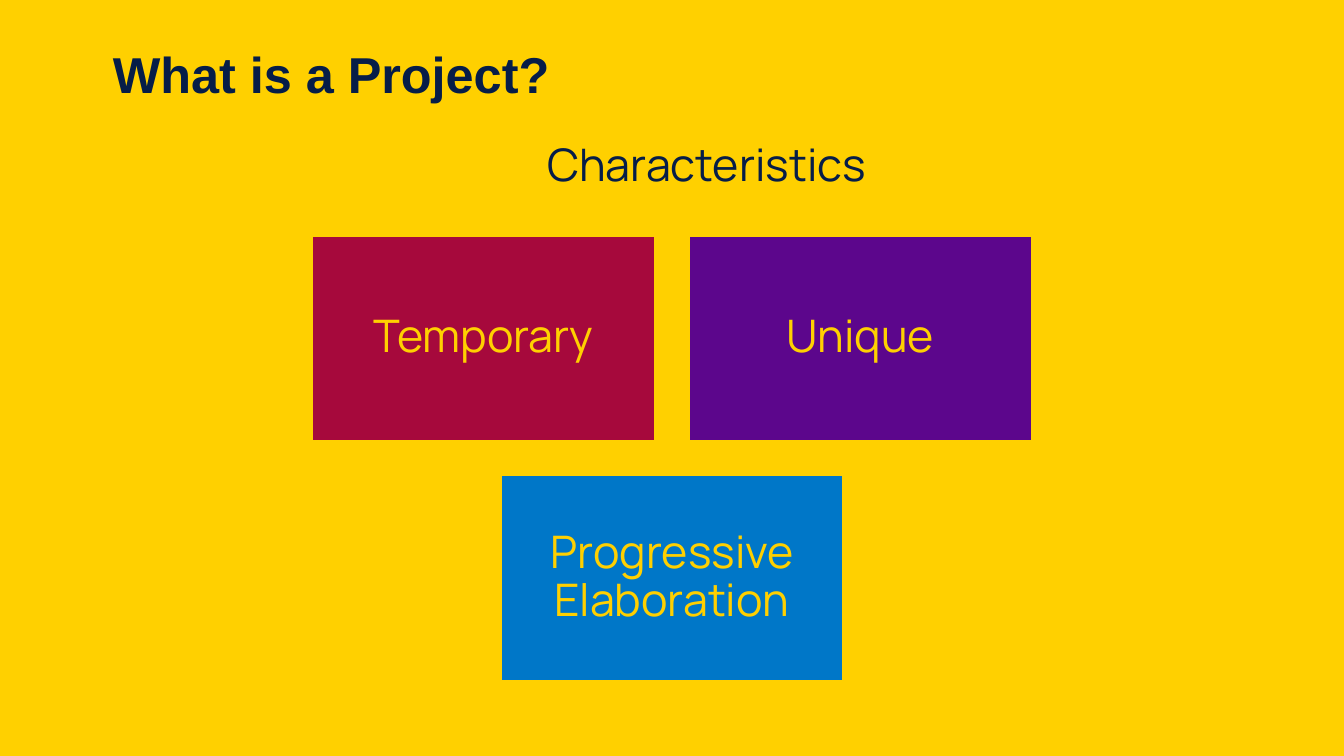
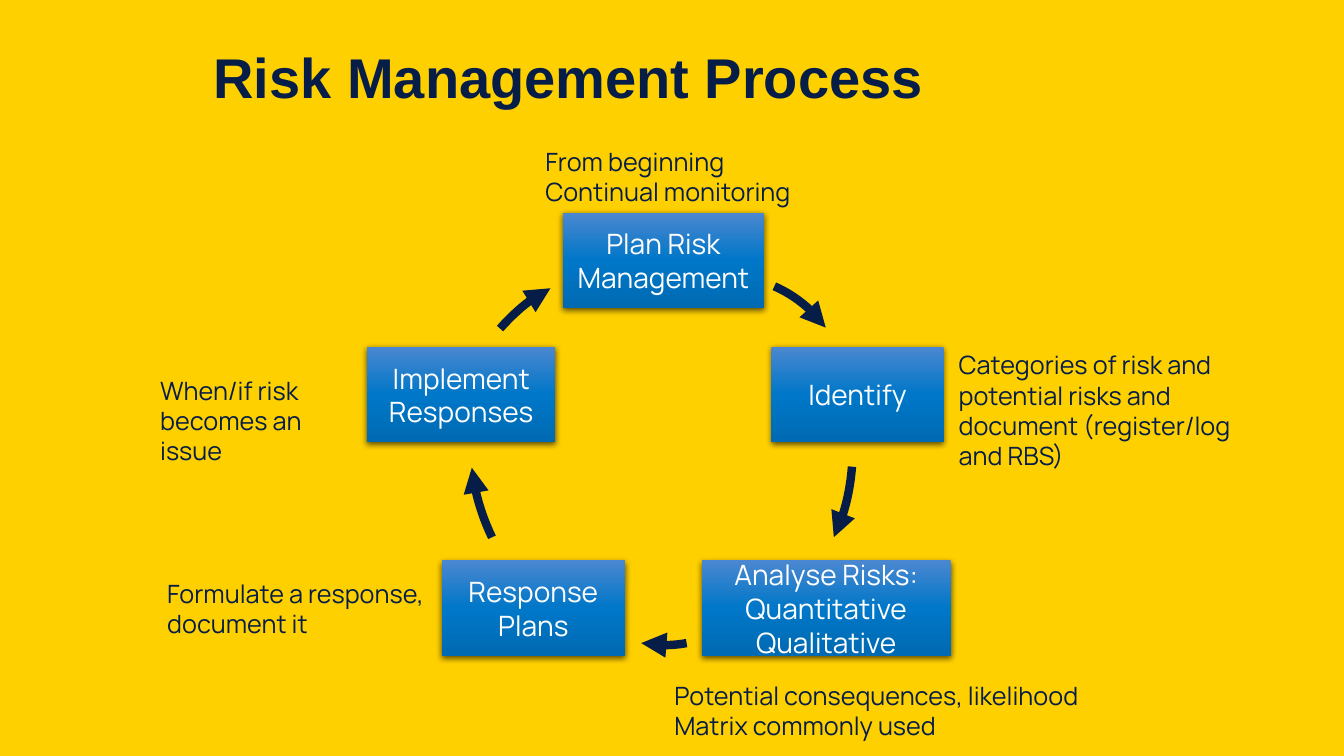
import copy

import pptx
import pptx.dml.color
import pptx.enum.shapes
import pptx.enum.text
import pptx.oxml
import pptx.oxml.ns
import pptx.util

Inches, Pt = pptx.util.Inches, pptx.util.Pt
RGBColor = pptx.dml.color.RGBColor
PP_ALIGN = pptx.enum.text.PP_ALIGN
MIDDLE = pptx.enum.text.MSO_ANCHOR.MIDDLE
RECT = pptx.enum.shapes.MSO_SHAPE.RECTANGLE
qn = pptx.oxml.ns.qn

YELLOW = RGBColor(0xFF, 0xD0, 0x00)
NAVY = RGBColor(0x06, 0x1D, 0x48)
WHITE = RGBColor(0xFF, 0xFF, 0xFF)
RED = RGBColor(0xA6, 0x09, 0x3C)
PURPLE = RGBColor(0x5C, 0x06, 0x8C)
BLUE = RGBColor(0x00, 0x77, 0xC8)
LIGHT_BLUE = RGBColor(0x4B, 0x87, 0xD0)
DARK_BLUE = RGBColor(0x00, 0x6A, 0xB2)

HEADING = {"name": "Arial", "bold": True}
BODY = {"name": "Manrope", "bold": False}
CENTERED = {"alignment": PP_ALIGN.CENTER}
TIGHT = {"line_spacing": 0.9}
SHADOW = (
    '<a:outerShdw xmlns:a="http://schemas.openxmlformats.org/drawingml/2006/main"'
    ' blurRad="57150" dist="19050" dir="5400000" algn="ctr" rotWithShape="0">'
    '<a:srgbClr val="000000"><a:alpha val="63000"/></a:srgbClr></a:outerShdw>'
)

CARDS = [("Temporary", RED), ("Unique", PURPLE), ("Progressive Elaboration", BLUE)]

STEPS = [
    ("Plan Risk Management", (4.09, 0.71, 2, 0.95)),
    ("Identify", (6.16, 2.04, 1.71, 0.95)),
    ("Analyse Risks:\nQuantitative Qualitative", (5.47, 4.16, 2.47, 0.95)),
    ("Response\nPlans", (2.89, 4.16, 1.82, 0.95)),
    ("Implement Responses", (2.15, 2.04, 1.87, 0.95)),
]
NOTES = [
    ("From beginning\nContinual monitoring", (3.82, 0, 2.65, 0.71)),
    ("Categories of risk and potential risks and document (register/log and RBS)",
     (7.92, 2.02, 3.28, 1.31)),
    ("Potential consequences, likelihood\nMatrix commonly used", (5.1, 5.3, 4.24, 0.71)),
    ("Formulate a response, document it", (0.07, 4.29, 2.91, 0.71)),
    ("When/if risk becomes an issue", (0, 2.27, 2.24, 1.01)),
]
ARROWS = [
    ((6.19, 1.44), (6.47, 1.61), (6.7, 1.85)),
    ((6.96, 3.23), (6.9, 3.6), (6.78, 3.93)),
    ((5.32, 4.98), (5.1, 5), (4.87, 4.98)),
    ((3.39, 3.93), (3.26, 3.59), (3.19, 3.24)),
    ((3.47, 1.86), (3.72, 1.62), (3.97, 1.46)),
]


def set_all(obj, values):
    """Set every attribute named in a dict of format values."""
    for name, value in values.items():
        setattr(obj, name, value)


def within(box, part):
    """Move a part's box from region coordinates to slide coordinates."""
    return (box[0] + part[0], box[1] + part[1], *part[2:])


def write(sp, text, size, color, font=BODY, para=None, frame=None):
    """Write styled paragraphs into a shape."""
    tf = sp.text_frame
    set_all(tf, {"word_wrap": True, **(frame or {})})
    tf.text = text
    for p in tf.paragraphs:
        set_all(p, para or {})
        for r in p.runs:
            set_all(r.font, {**font, "size": Pt(size)})
            r.font.color.rgb = color


def add_text(s, box, text, size, **style):
    """Add a navy text box."""
    sp = s.shapes.add_textbox(*map(Inches, box))
    write(sp, text, size, NAVY, **style)


def add_title(s, box, text, size):
    """Add the bold slide title."""
    add_text(s, box, text, size, font=HEADING, para=TIGHT,
             frame={"vertical_anchor": MIDDLE})


def add_rect(s, box):
    """Add a rectangle without the theme shadow."""
    sp = s.shapes.add_shape(RECT, *map(Inches, box))
    sp.shadow.inherit = False
    return sp


def add_cards(s, box, gap=0.34):
    """Fill a region with two cards above one centred card."""
    left, top, width, height = box
    w, h = (width - gap) / 2, (height - gap) / 2
    sides = ("left", "top", "right", "bottom")
    frame = {f"margin_{side}": Inches(0.13) for side in sides}
    for (text, color), (col, row) in zip(CARDS, [(0, 0), (1, 0), (0.5, 1)]):
        sp = add_rect(s, (left + col * (w + gap), top + row * (h + gap), w, h))
        sp.fill.solid()
        sp.fill.fore_color.rgb = color
        sp.line.color.rgb = YELLOW
        sp.line.width = Pt(1)
        write(sp, text, 32, YELLOW, para={**CENTERED, **TIGHT},
              frame={**frame, "vertical_anchor": MIDDLE})


def add_step(s, box, text):
    """Add a gradient process box with a soft shadow."""
    sp = add_rect(s, box)
    sp.fill.gradient()
    sp.fill.gradient_angle = 270
    spPr = sp._element.spPr
    stops = spPr.find(".//" + qn("a:gsLst"))
    stops.insert(1, copy.deepcopy(stops[0]))
    colors = (LIGHT_BLUE, BLUE, DARK_BLUE)
    for stop, color, position in zip(sp.fill.gradient_stops, colors, (0, 0.5, 1)):
        stop.color.rgb = color
        stop.position = position
    sp.line.fill.background()
    spPr.find(qn("a:effectLst")).append(pptx.oxml.parse_xml(SHADOW))
    write(sp, text, 20, WHITE, para=CENTERED, frame={"vertical_anchor": MIDDLE})


def add_arrow(s, start, middle, end, segments=12):
    """Draw a curved arrow through three points."""
    points = []
    for i in range(segments + 1):
        t = i / segments
        weights = ((1 - t) * (1 - 2 * t), 4 * t * (1 - t), t * (2 * t - 1))
        points.append(tuple(
            Inches(sum(w * v for w, v in zip(weights, axis)))
            for axis in zip(start, middle, end)))
    builder = s.shapes.build_freeform(*points[0])
    builder.add_line_segments(points[1:], close=False)
    sp = builder.convert_to_shape()
    sp.shadow.inherit = False
    sp.fill.background()
    sp.line.color.rgb = NAVY
    sp.line.width = Pt(6)
    ln = sp._element.spPr.find(qn("a:ln"))
    ln.append(ln.makeelement(qn("a:tailEnd"), {"type": "triangle"}))


def add_cycle(s, box):
    """Lay out the process boxes, arrows and notes in a region."""
    for text, part in STEPS:
        add_step(s, within(box, part), text)
    for points in ARROWS:
        add_arrow(s, *(within(box, point) for point in points))
    for text, part in NOTES:
        add_text(s, within(box, part), text, 18)


def project_slide(prs):
    """Build the project characteristics slide."""
    s = prs.slides.add_slide(prs.slide_layouts[6])
    add_title(s, (1.02, 0.43, 8.62, 0.68), "What is a Project?", 36)
    add_cards(s, (3.1, 2.34, 7.13, 4.41))
    add_text(s, (5.33, 1.31, 5, 0.64), "Characteristics", 32)


def risk_slide(prs):
    """Build the risk management process slide."""
    s = prs.slides.add_slide(prs.slide_layouts[6])
    add_title(s, (2.02, 0.07, 9.82, 1.45), "Risk Management Process", 40)
    add_cycle(s, (1.49, 1.4, 11.2, 6.01))


def main():
    """Build and save the presentation."""
    prs = pptx.Presentation()
    set_all(prs, {"slide_width": Inches(13.33), "slide_height": Inches(7.5)})
    fill = prs.slide_master.background.fill
    fill.solid()
    fill.fore_color.rgb = YELLOW
    project_slide(prs)
    risk_slide(prs)
    prs.save("out.pptx")


if __name__ == "__main__":
    main()
